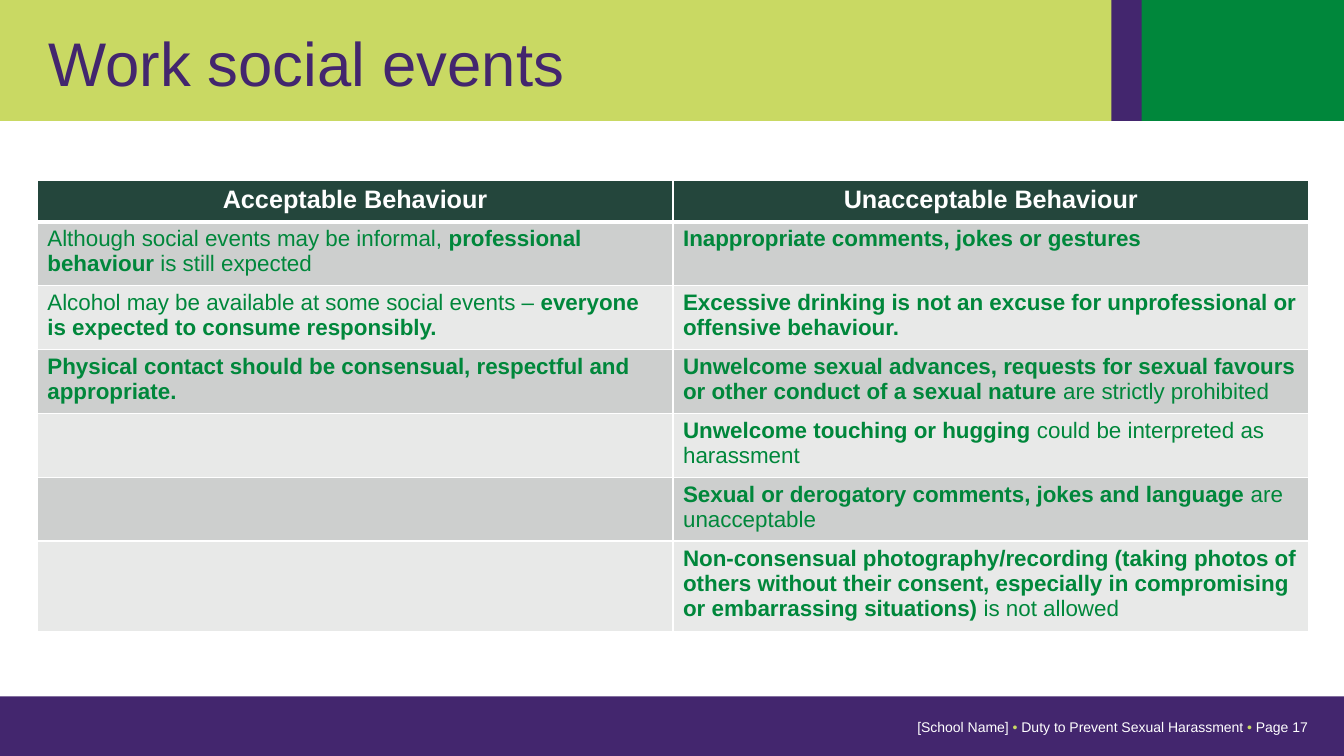
"""Builds the slide on behaviour at work social events."""
from dataclasses import dataclass

from lxml import etree
from pptx import Presentation
from pptx.dml.color import RGBColor
from pptx.enum.shapes import MSO_SHAPE
from pptx.enum.text import MSO_ANCHOR, MSO_AUTO_SIZE, PP_ALIGN
from pptx.oxml.ns import qn
from pptx.util import Inches, Pt

RECT = MSO_SHAPE.RECTANGLE
MIDDLE = MSO_ANCHOR.MIDDLE
GROW = MSO_AUTO_SIZE.SHAPE_TO_FIT_TEXT
LEFT, CENTER, RIGHT = PP_ALIGN.LEFT, PP_ALIGN.CENTER, PP_ALIGN.RIGHT
WIDTH, HEIGHT = Inches(13.33), Inches(7.5)


@dataclass(frozen=True)
class Theme:
    """Holds the colours, font and type sizes."""
    font: str = "Arial"
    lime: str = "C9D963"
    green: str = "00873B"
    purple: str = "43266E"
    white: str = "FFFFFF"
    header: str = "24463C"
    bands: tuple = ("CDCFCE", "E8E9E8")
    title_size: int = 44
    header_size: int = 18
    body_size: int = 16
    footer_size: int = 10


THEME = Theme()

BARS = [
    ((0, 0, 84.9, 16), THEME.lime),
    ((84.9, 0, 15.1, 16), THEME.green),
    ((82.7, 0, 2.25, 16), THEME.purple),
    ((0, 92.1, 100, 7.9), THEME.purple),
]

HEADINGS = ("Acceptable Behaviour", "Unacceptable Behaviour")

BEHAVIOURS = [
    ("Although social events may be informal, **professional behaviour **is still expected",
     "**Inappropriate comments, jokes or gestures"),
    ("Alcohol may be available at some social events – "
     "**everyone is expected to consume responsibly.",
     "**Excessive drinking is not an excuse for unprofessional or offensive behaviour."),
    ("**Physical contact should be consensual, respectful and appropriate.",
     "**Unwelcome sexual advances, requests for sexual favours or other conduct "
     "of a sexual nature **are strictly prohibited"),
    ("", "**Unwelcome touching or hugging **could be interpreted as harassment"),
    ("", "**Sexual or derogatory comments, jokes and language **are unacceptable"),
    ("", "**Non-consensual photography/recording (taking photos of others without their "
         "consent, especially in compromising or embarrassing situations) **is not allowed"),
]

FOOTER = ("[School Name] ", "Duty to Prevent Sexual Harassment ", "Page 17")


def box(x, y, w, h):
    """Turn percentages of the slide into left, top, width and height."""
    return (int(WIDTH * x / 100), int(HEIGHT * y / 100),
            int(WIDTH * w / 100), int(HEIGHT * h / 100))


def add_run(p, text, size, color, bold=False):
    """Append a formatted run to a paragraph."""
    r = p.add_run()
    r.text = text
    r.font.name = THEME.font
    r.font.size = Pt(size)
    r.font.bold = bold
    r.font.color.rgb = RGBColor.from_string(color)


def add_bar(s, area, color):
    """Add a plain coloured rectangle."""
    sp = s.shapes.add_shape(RECT, *box(*area))
    sp.shadow.inherit = False
    sp.fill.solid()
    sp.fill.fore_color.rgb = RGBColor.from_string(color)
    sp.line.fill.background()


def add_textbox(s, area):
    """Add a wrapping, vertically centred text box and return its frame."""
    tf = s.shapes.add_textbox(*box(*area)).text_frame
    tf.word_wrap = True
    tf.vertical_anchor = MIDDLE
    return tf


def add_title(s, text):
    """Add the slide title."""
    p = add_textbox(s, (2.85, 2.13, 86.27, 13.33)).paragraphs[0]
    p.line_spacing = 0.9
    add_run(p, text, THEME.title_size, THEME.purple)


def add_footer(s, parts):
    """Add the footer parts with coloured bullets between them."""
    tf = add_textbox(s, (39.68, 94.4, 58.36, 3.6))
    tf.auto_size = GROW
    tf.margin_left = Inches(0.24)
    p = tf.paragraphs[0]
    p.alignment = RIGHT
    for i, part in enumerate(parts):
        if i:
            add_run(p, "• ", THEME.footer_size, THEME.lime)
        add_run(p, part, THEME.footer_size, THEME.white)


def set_borders(cell, bottom):
    """Draw white cell borders with the given bottom width in points."""
    tc_pr = cell._tc.get_or_add_tcPr()
    widths = {"a:lnL": 1, "a:lnR": 1, "a:lnT": 1, "a:lnB": bottom}
    for tag, width in widths.items():
        ln = etree.SubElement(tc_pr, qn(tag), w=str(Pt(width)))
        fill = etree.SubElement(ln, qn("a:solidFill"))
        etree.SubElement(fill, qn("a:srgbClr"), val=THEME.white)


def fill_cell(cell, text, size, color, fill, align=LEFT, bottom=1):
    """Format a cell and write its text, where ** switches bold."""
    set_borders(cell, bottom)
    cell.fill.solid()
    cell.fill.fore_color.rgb = RGBColor.from_string(fill)
    p = cell.text_frame.paragraphs[0]
    p.alignment = align
    p.font.size = Pt(size)
    for i, part in enumerate(text.split("**")):
        if part:
            add_run(p, part, size, color, bold=i % 2 == 1)


def add_behaviour_table(s, headings, rows):
    """Add the table that contrasts the two kinds of behaviour."""
    count = len(rows) + 1
    area = box(2.78, 23.87, 94.6, 5.47 * count)
    table = s.shapes.add_table(count, len(headings), *area).table
    for c, heading in enumerate(headings):
        fill_cell(table.cell(0, c), "**" + heading, THEME.header_size,
                  THEME.white, THEME.header, CENTER, bottom=3)
    for r, row in enumerate(rows):
        for c, text in enumerate(row):
            fill_cell(table.cell(r + 1, c), text, THEME.body_size,
                      THEME.green, THEME.bands[r % 2])


def main():
    """Build and save the slide."""
    prs = Presentation()
    prs.slide_width, prs.slide_height = WIDTH, HEIGHT
    s = prs.slides.add_slide(prs.slide_layouts[6])
    for area, color in BARS:
        add_bar(s, area, color)
    add_footer(s, FOOTER)
    add_title(s, "Work social events")
    add_behaviour_table(s, HEADINGS, BEHAVIOURS)
    prs.save("out.pptx")


if __name__ == "__main__":
    main()
